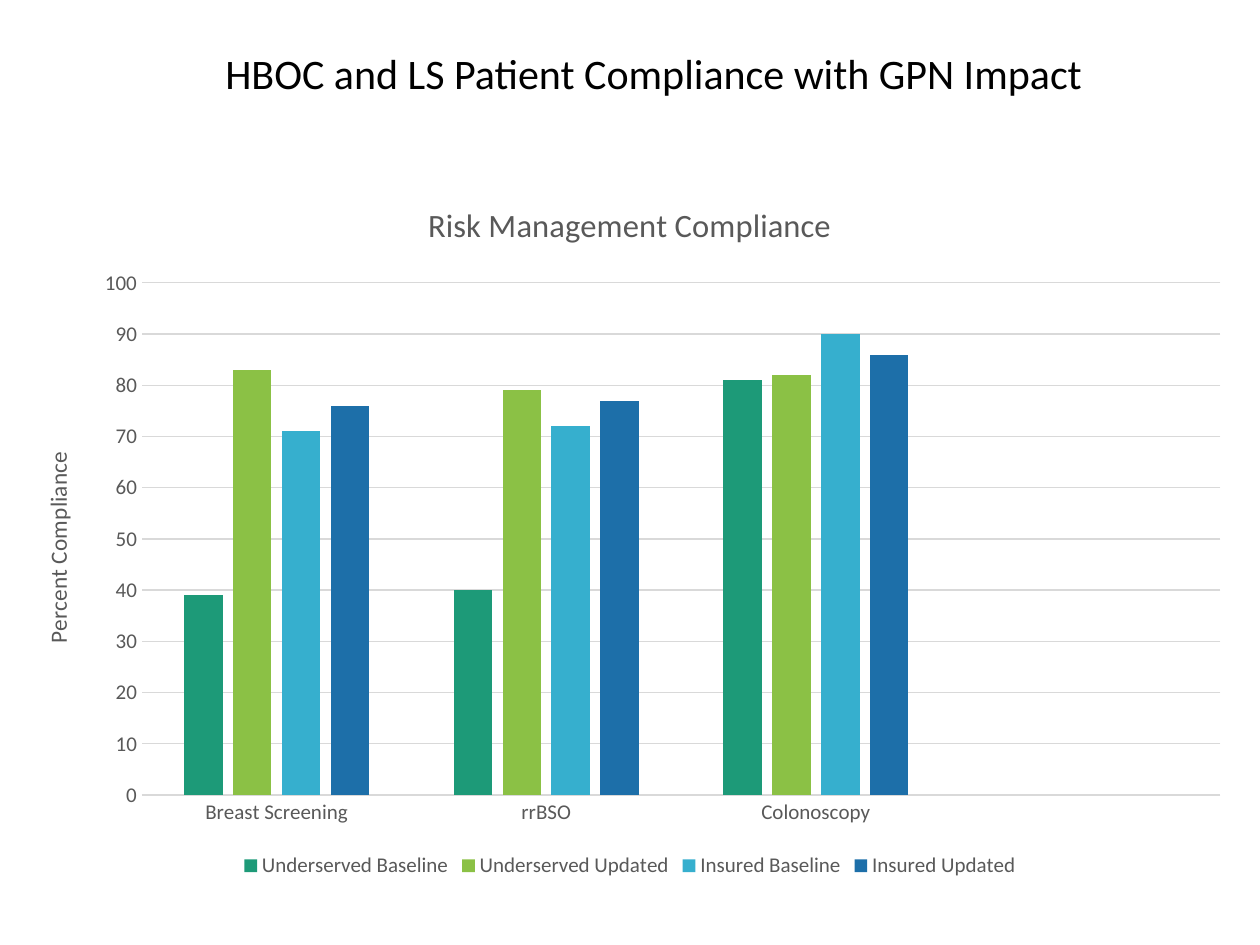
from dataclasses import dataclass
from pptx import Presentation
from pptx.chart.data import CategoryChartData
from pptx.dml.color import RGBColor
from pptx.enum.chart import XL_CHART_TYPE, XL_LEGEND_POSITION, XL_TICK_MARK
from pptx.util import Inches, Pt

HEAD = "HBOC and LS Patient Compliance with GPN Impact"
TITLE = "Risk Management Compliance"
UNIT = "Percent Compliance"
CATS = ["Breast Screening", "rrBSO", "Colonoscopy", ""]
ROWS = [
    ("Underserved Baseline", (39, 40, 81, None), "1D9A78"),
    ("Underserved Updated", (83, 79, 82, None), "8BC145"),
    ("Insured Baseline", (71, 72, 90, None), "36AFCE"),
    ("Insured Updated", (76, 77, 86, None), "1D6FA9"),
]


@dataclass(frozen=True)
class Theme:
    face: str = "Calibri"
    ink: str = "000000"
    gray: str = "595959"
    rule: str = "D9D9D9"
    head: float = 24
    title: float = 18.6
    unit: float = 13.3
    label: float = 12


THEME = Theme()


def style(font, size, color=THEME.gray):
    font.name = THEME.face
    font.size = Pt(size)
    font.bold = False
    font.color.rgb = RGBColor.from_string(color)


def rule(line):
    line.color.rgb = RGBColor.from_string(THEME.rule)
    line.width = Pt(0.75)


def label(owner, text, size):
    frame = owner.text_frame
    frame.text = text
    style(frame.paragraphs[0].font, size)


def draw_chart(slide):
    data = CategoryChartData()
    data.categories = CATS
    for name, vals, _ in ROWS:
        data.add_series(name, vals)
    chart = slide.shapes.add_chart(
        XL_CHART_TYPE.COLUMN_CLUSTERED,
        Inches(0.12), Inches(1.39), Inches(9.76), Inches(5.62), data,
    ).chart
    style(chart.font, THEME.label)
    chart.has_title = True
    label(chart.chart_title, TITLE, THEME.title)
    chart.chart_title.include_in_layout = False

    chart.has_legend = True
    chart.legend.position = XL_LEGEND_POSITION.BOTTOM
    chart.legend.include_in_layout = False
    style(chart.legend.font, THEME.label)

    plot = chart.plots[0]
    plot.vary_by_categories = False
    plot.gap_width = 219
    plot.overlap = -27
    for bar, (_, _, color) in zip(plot.series, ROWS):
        bar.format.fill.solid()
        bar.format.fill.fore_color.rgb = RGBColor.from_string(color)
        bar.invert_if_negative = False

    for axis in (chart.category_axis, chart.value_axis):
        axis.major_tick_mark = axis.minor_tick_mark = XL_TICK_MARK.NONE
        style(axis.tick_labels.font, THEME.label)
    rule(chart.category_axis.format.line)

    scale = chart.value_axis
    scale.minimum_scale, scale.maximum_scale, scale.major_unit = 0, 100, 10
    scale.format.line.fill.background()
    scale.has_major_gridlines = True
    rule(scale.major_gridlines.format.line)
    scale.has_title = True
    label(scale.axis_title, UNIT, THEME.unit)


def draw_head(slide):
    box = slide.shapes.add_textbox(
        Inches(1.69), Inches(0.33), Inches(7.11), Inches(0.5))
    frame = box.text_frame
    frame.word_wrap = True
    frame.text = HEAD
    style(frame.paragraphs[0].font, THEME.head, THEME.ink)


def main():
    deck = Presentation()
    deck.slide_width, deck.slide_height = Inches(10), Inches(7.5)
    slide = deck.slides.add_slide(deck.slide_layouts[6])
    draw_chart(slide)
    draw_head(slide)
    deck.save("out.pptx")


if __name__ == "__main__":
    main()
